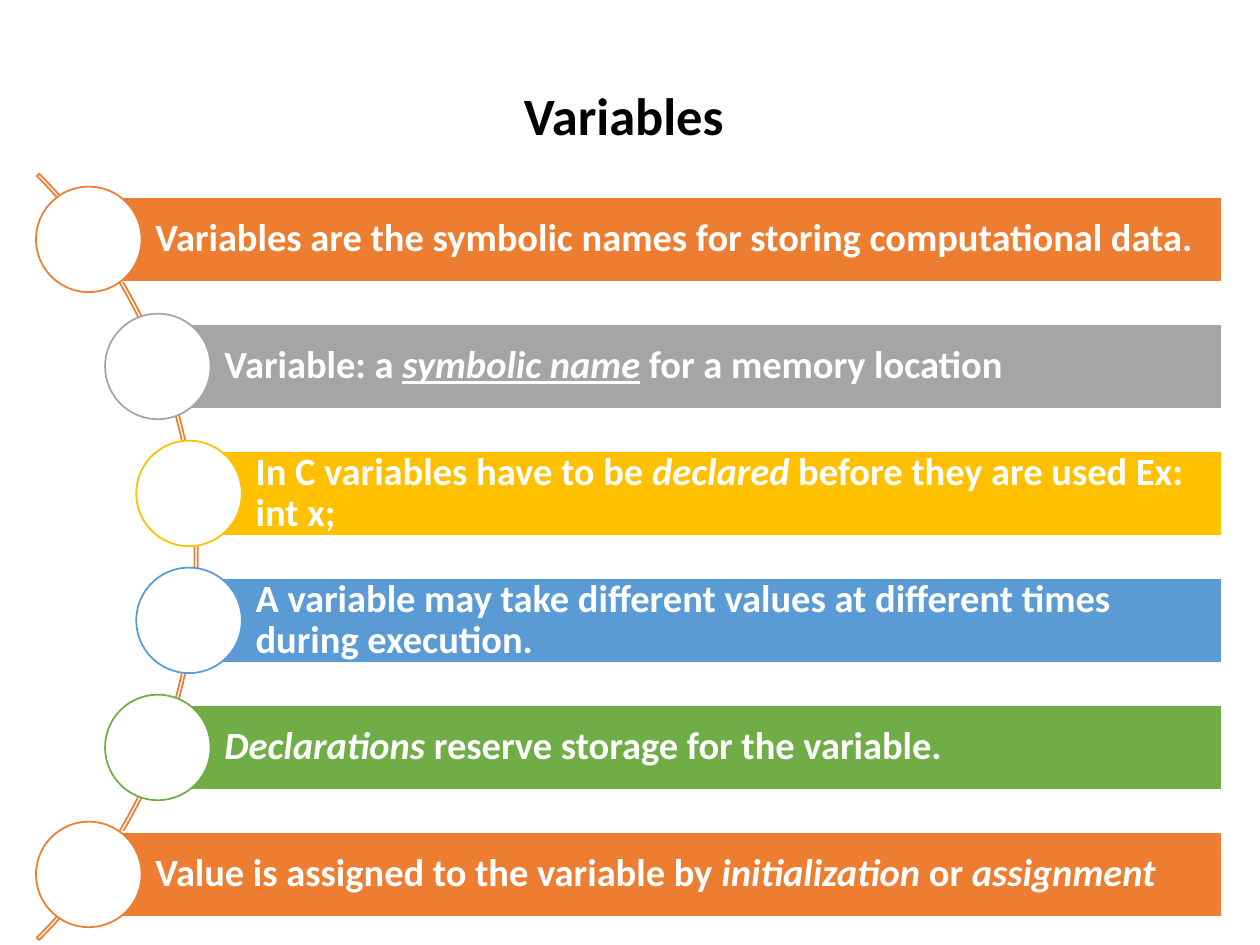
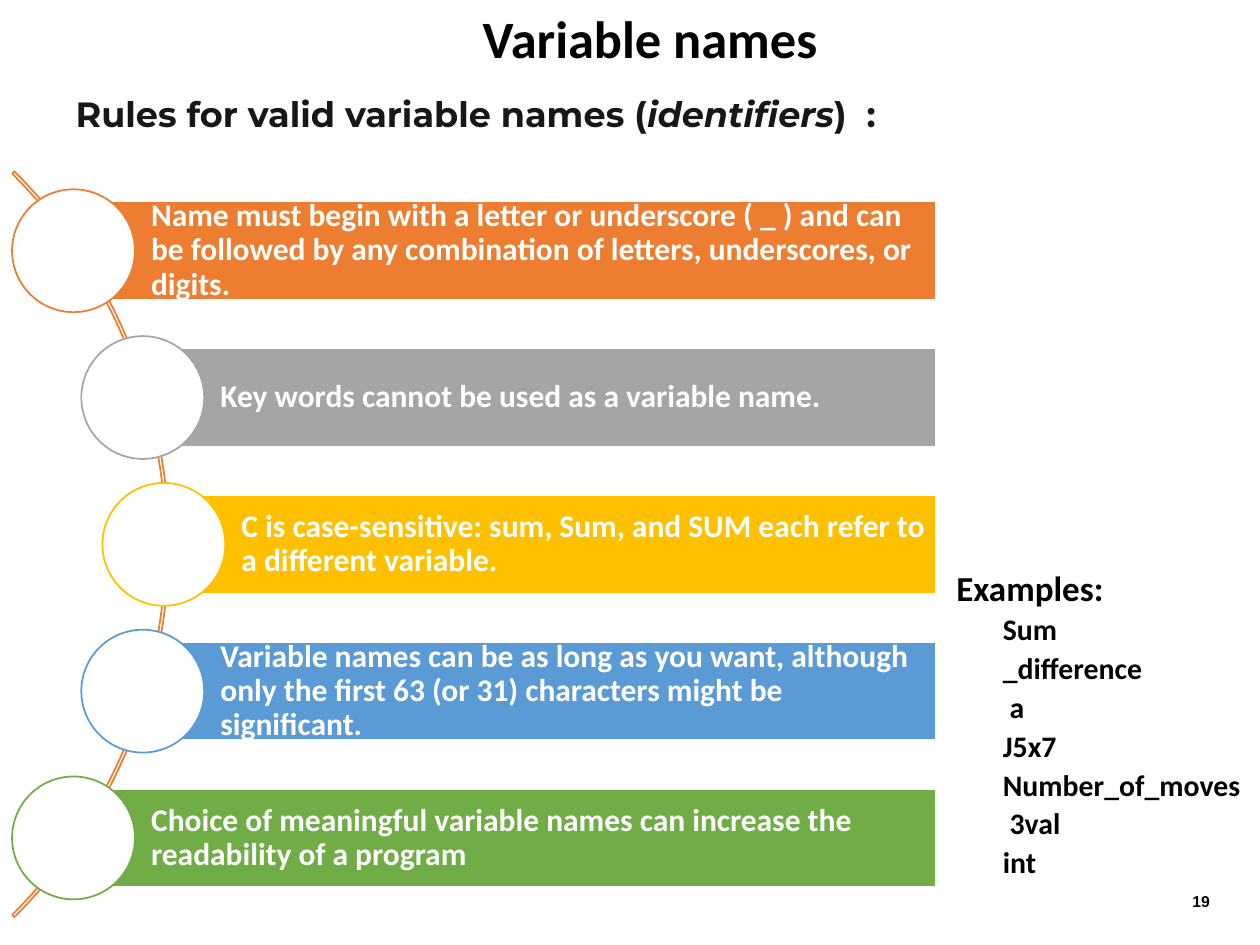
import math

from pptx import Presentation
from pptx import util as u
from pptx.dml.color import RGBColor
from pptx.enum import shapes, text

CELL = u.Inches(0.1)  # the slide is a grid of 100 columns by 75 rows
COLS, ROWS = 100, 75

BLACK = RGBColor(0x00, 0x00, 0x00)
INK = RGBColor(0x18, 0x17, 0x17)
WHITE = RGBColor(0xFF, 0xFF, 0xFF)
ORANGE = RGBColor(0xED, 0x7D, 0x31)
GREY = RGBColor(0xA5, 0xA5, 0xA5)
GOLD = RGBColor(0xFF, 0xC0, 0x00)
BLUE = RGBColor(0x5B, 0x9B, 0xD5)
GREEN = RGBColor(0x70, 0xAD, 0x47)
ACCENTS = [ORANGE, GREY, GOLD, BLUE, GREEN]

TITLE = {"name": "Calibri", "size": u.Pt(30), "bold": True, "color": BLACK}
SUBTITLE = {**TITLE, "name": "Montserrat", "size": u.Pt(20), "color": INK}
LIST_HEAD = {**TITLE, "size": u.Pt(20)}
LIST_ITEM = {**TITLE, "size": u.Pt(17)}
PAGE_NUMBER = {**TITLE, "name": "Arial", "size": u.Pt(9)}
RULE = {**TITLE, "color": WHITE}

ITALIC = {"italic": True}
UNDERLINED = {"italic": True, "underline": True}
CENTER, LEFT, RIGHT = (text.PP_ALIGN.CENTER, text.PP_ALIGN.LEFT,
                       text.PP_ALIGN.RIGHT)
TOP, MIDDLE = text.MSO_ANCHOR.TOP, text.MSO_ANCHOR.MIDDLE

FACTS = [
    ["Variables are the symbolic names for storing computational data."],
    ["Variable: a ", ("symbolic name", UNDERLINED), " for a memory location"],
    ["In C variables have to be ", ("declared", ITALIC),
     " before they are used Ex: int x;"],
    ["A variable may take different values at different times during "
     "execution."],
    [("Declarations ", ITALIC), "reserve storage for the variable."],
    ["Value is assigned to the variable by ", ("initialization", ITALIC),
     " or ", ("assignment", ITALIC)],
]
NAME_RULES = [
    ["Name must begin with a letter or underscore ( _ ) and can be followed "
     "by any combination of letters, underscores, or digits."],
    ["Key words cannot be used as a variable name."],
    ["C is case-sensitive: sum, Sum, and SUM each refer to a different "
     "variable."],
    ["Variable names can be as long as you want, although only the first 63 "
     "(or 31) characters might be significant."],
    ["Choice of meaningful variable names can increase the readability of a "
     "program"],
]
EXAMPLES = ["Sum", "_difference", " a", "J5x7", "Number_of_moves", " 3val",
            "int"]


def cells(*counts):
    return [round(n * CELL) for n in counts]


def set_font(font, style):
    for key, value in style.items():
        if key == "color":
            font.color.rgb = value
        else:
            setattr(font, key, value)


def write(p, runs, style, **paragraph_format):
    """Fill a paragraph with runs: plain strings or (string, extra style)."""
    for key, value in {"line_spacing": 0.9, **paragraph_format}.items():
        setattr(p, key, value)
    for run in runs:
        words, extra = (run, {}) if isinstance(run, str) else run
        r = p.add_run()
        r.text = words
        set_font(r.font, {**style, **extra})


def set_frame(tf, anchor, margins):
    """Margins are left, top, right and bottom, in cells."""
    tf.word_wrap = True
    tf.vertical_anchor = anchor
    for side, margin in zip(("left", "top", "right", "bottom"),
                            cells(*margins)):
        setattr(tf, f"margin_{side}", margin)


def add_text(s, box, anchor=TOP, margins=(0.7, 0.4, 0.7, 0.4)):
    tf = s.shapes.add_textbox(*cells(*box)).text_frame
    set_frame(tf, anchor, margins)
    return tf


def add_title(s, words, box, lead=1):
    tf = add_text(s, box, MIDDLE, (lead, 0.5, 1, 0.5))
    write(tf.paragraphs[0], [words], TITLE, alignment=CENTER)


def add_outlined(group, kind, box, line, fill=None):
    sp = group.shapes.add_shape(kind, *cells(*box))
    sp.shadow.inherit = False
    sp.line.color.rgb = line
    sp.line.width = u.Pt(1)
    if fill is None:
        sp.fill.background()
    else:
        sp.fill.solid()
        sp.fill.fore_color.rgb = fill
    return sp


def add_curved_list(s, items, center, radius, pitch, bar_height, right, size):
    """Bars with round markers whose centres follow an arc, all in cells."""
    kinds = shapes.MSO_SHAPE
    group = s.shapes.add_group_shape()
    cx, cy = center
    arc = add_outlined(group, kinds.BLOCK_ARC,
                       (cx - radius, cy - radius, 2 * radius, 2 * radius),
                       ORANGE)
    for i, value in enumerate((189, 27, 0.003)):
        arc.adjustments[i] = value

    marker = 1.25 * bar_height
    for i, runs in enumerate(items):
        color = ACCENTS[i % len(ACCENTS)]
        dy = (i - (len(items) - 1) / 2) * pitch
        x, y = cx + math.sqrt((radius - 0.4) ** 2 - dy ** 2), cy + dy
        bar = add_outlined(group, kinds.RECTANGLE,
                           (x, y - bar_height / 2, right - x, bar_height),
                           WHITE, color)
        set_frame(bar.text_frame, MIDDLE, (0.79 * bar_height, 0.5, 0.5, 0.5))
        write(bar.text_frame.paragraphs[0], runs,
              {**RULE, "size": u.Pt(size)}, alignment=LEFT)
        add_outlined(group, kinds.OVAL,
                     (x - marker / 2, y - marker / 2, marker, marker),
                     color, WHITE)


def add_examples(s, box):
    tf = add_text(s, box)
    write(tf.paragraphs[0], ["Examples:"], LIST_HEAD, alignment=LEFT,
          space_before=u.Pt(7.5))
    for name in EXAMPLES:
        p = tf.add_paragraph()
        write(p, [name], LIST_ITEM, alignment=LEFT, space_before=u.Pt(3.8))
        pPr = p._p.get_or_add_pPr()
        pPr.set("marL", str(u.Inches(0.56)))
        pPr.set("indent", str(u.Inches(-0.19)))


def main():
    prs = Presentation()
    prs.slide_width, prs.slide_height = cells(COLS, ROWS)
    blank = prs.slide_layouts[6]

    s = prs.slides.add_slide(blank)
    add_title(s, "Variables", (18.1, 6.6, 58.8, 5.6), lead=5)
    add_curved_list(s, FACTS, center=(-27.3, 44.2), radius=43, pitch=10.08,
                    bar_height=6.7, right=97, size=22)

    s = prs.slides.add_slide(blank)
    add_title(s, "Variable names", (22.2, 0.5, 58.8, 5.6))
    tf = add_text(s, (5.3, 7.3, 89.4, 4))
    write(tf.paragraphs[0],
          ["Rules for valid variable names (", ("identifiers", ITALIC),
           ")  :"], SUBTITLE, alignment=LEFT, space_before=u.Pt(7.5))
    tf = add_text(s, (93.1, 69.5, 3.9, 4), MIDDLE, (1, 0.5, 1, 0.5))
    write(tf.paragraphs[0], ["19"], PAGE_NUMBER, alignment=RIGHT,
          line_spacing=1.0)
    add_curved_list(s, NAME_RULES, center=(-28.45, 43.2), radius=41.85,
                    pitch=11.65, bar_height=7.8, right=74.3, size=18)
    add_examples(s, (75.2, 44.9, 24.3, 29))

    prs.save("out.pptx")


if __name__ == "__main__":
    main()
